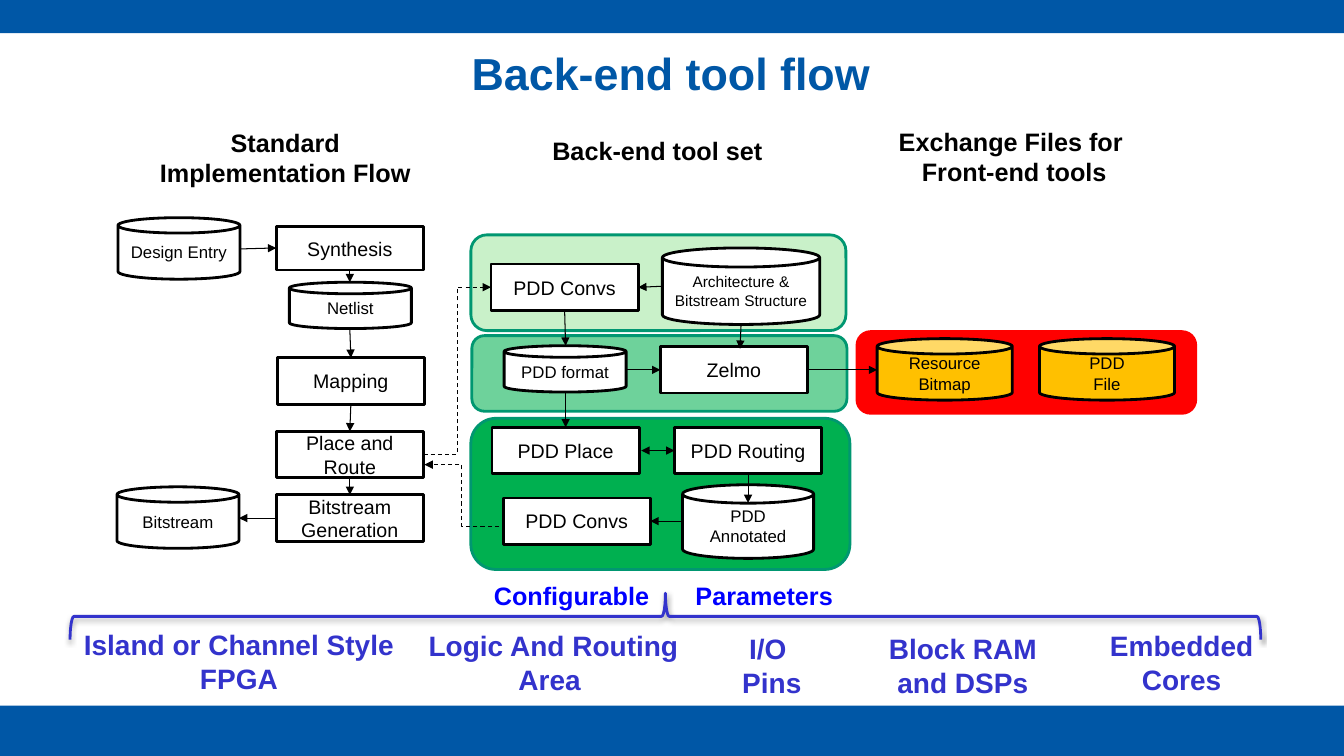
"""Build the back-end tool flow slide."""
import pptx
import pptx.dml.color
import pptx.enum.dml
import pptx.enum.shapes
import pptx.enum.text
import pptx.oxml.ns
import pptx.util
from lxml import etree

Inches = pptx.util.Inches
Pt = pptx.util.Pt
SHAPE = pptx.enum.shapes.MSO_SHAPE
CONNECTOR = pptx.enum.shapes.MSO_CONNECTOR
ALIGN = pptx.enum.text.PP_ALIGN
ANCHOR = pptx.enum.text.MSO_ANCHOR
qn = pptx.oxml.ns.qn

COLORS = {
    "blue": "0057A6", "white": "FFFFFF", "black": "000000", "red": "FF0000",
    "green": "00B050", "light green": "00C102", "teal": "009771",
    "gold": "FFC000", "indigo": "3333CC", "bright blue": "0000FF",
}
BOX_SIZE = (1.46, 0.46)

PANELS = [
    ((8.5, 3.29, 3.36, 0.81), "red", "red", None),
    ((4.67, 4.15, 3.76, 1.5), "green", "teal", None),
    ((4.68, 3.33, 3.72, 0.75), "green", "teal", 57),
    ((4.67, 2.33, 3.72, 0.95), "light green", "teal", 21),
]
PROCESSES = [
    ("Mapping", 2.75, 3.55), ("Place and Route", 2.74, 4.28),
    ("Bitstream Generation", 2.74, 4.91), ("PDD Convs", 4.87, 2.62),
    ("Zelmo", 6.55, 3.44), ("PDD Place", 4.88, 4.24),
    ("PDD Routing", 6.69, 4.24), ("PDD Convs", 4.99, 4.94),
]
STORES = [
    ("Design Entry", (1.17, 2.16, 1.21, 0.61), "white", 12),
    ("Bitstream", (1.16, 4.83, 1.21, 0.61), "white", 12),
    ("Netlist", (2.87, 2.8, 1.21, 0.46), "white", 12),
    ("Architecture & Bitstream Structure", (6.57, 2.46, 1.56, 0.76), "white", 11),
    ("PDD format", (5, 3.43, 1.21, 0.46), "white", 12),
    ("PDD Annotated", (6.77, 4.81, 1.3, 0.73), "white", 12),
    ("Resource Bitmap", (8.7, 3.36, 1.34, 0.61), "gold", 12),
    ("PDD\nFile", (10.31, 3.36, 1.34, 0.61), "gold", 12),
]
ARROWS = [
    (2.38, 2.47, 2.74, 2.46), (3.47, 2.68, 3.47, 2.8), (3.47, 3.27, 3.48, 3.55),
    (3.48, 4.01, 3.47, 4.28), (3.47, 4.74, 3.47, 4.91), (2.74, 5.14, 2.37, 5.14),
    (6.57, 2.84, 6.33, 2.85), (5.6, 3.08, 5.61, 3.43), (7.35, 3.22, 7.34, 3.46),
    (6.21, 3.67, 6.55, 3.67), (8.01, 3.67, 8.7, 3.67), (5.61, 3.9, 5.61, 4.24),
    (7.42, 4.69, 7.42, 4.99), (6.77, 5.17, 6.45, 5.17),
]
FEEDBACK_ARROWS = [(4.2, 4.51, 4.87, 2.85), (4.95, 5.22, 4.21, 4.61)]
HEADINGS = [
    ("Standard\nImplementation Flow", (1.16, 1.21, 3.34, 0.71)),
    ("Back-end tool set", (4.85, 1.29, 3.34, 0.4)),
    ("Exchange Files for \nFront-end tools", (8.39, 1.2, 3.34, 0.71)),
]
PARAMETERS = [
    ("Island or Channel Style \nFPGA", (0.7, 6.18, 3.34, 0.77)),
    ("Logic And Routing\nArea ", (3.82, 6.19, 3.34, 0.77)),
    ("I/O \nPins", (6.45, 6.22, 2.41, 0.77)),
    ("Block RAM and DSPs", (8.5, 6.22, 2.1, 0.77)),
    ("Embedded Cores", (10.67, 6.19, 2.1, 0.77)),
]


def rgb(name):
    """Return the named colour."""
    return pptx.dml.color.RGBColor.from_string(COLORS[name])


def write_text(frame, text, size=14, color="black", bold=False,
               align=ALIGN.CENTER, anchor=ANCHOR.MIDDLE):
    """Write one paragraph per line of text in a single format."""
    frame.word_wrap = True
    frame.vertical_anchor = anchor
    for index, line in enumerate(text.split("\n")):
        paragraph = frame.add_paragraph() if index else frame.paragraphs[0]
        paragraph.alignment = align
        run = paragraph.add_run()
        run.text = line
        run.font.name = "Arial"
        run.font.size = Pt(size)
        run.font.bold = bold
        run.font.color.rgb = rgb(color)


def add_shape(slide, kind, bounds, fill=None, line=None, alpha=None):
    """Add a preset shape, with an optional opacity in percent."""
    shape = slide.shapes.add_shape(kind, *map(Inches, bounds))
    shape.shadow.inherit = False
    if fill:
        shape.fill.solid()
        shape.fill.fore_color.rgb = rgb(fill)
    else:
        shape.fill.background()
    if line:
        shape.line.color.rgb = rgb(line)
        shape.line.width = Pt(2)
    else:
        shape.line.fill.background()
    if alpha:
        color = shape.fill._xPr.find(".//" + qn("a:srgbClr"))
        etree.SubElement(color, qn("a:alpha"), val=str(alpha * 1000))
    return shape


def add_node(slide, kind, text, bounds, fill="white", size=14):
    """Add an outlined flow node with centred text."""
    shape = add_shape(slide, kind, bounds, fill, "black")
    write_text(shape.text_frame, text, size=size)


def add_label(slide, text, bounds, **text_format):
    """Add a bold text box."""
    box = slide.shapes.add_textbox(*map(Inches, bounds))
    write_text(box.text_frame, text, bold=True, anchor=ANCHOR.TOP, **text_format)
    return box


def add_arrow(slide, ends, kind=CONNECTOR.STRAIGHT, dashed=False, double=False):
    """Add a thin black arrow."""
    connector = slide.shapes.add_connector(kind, *map(Inches, ends))
    connector.line.color.rgb = rgb("black")
    connector.line.width = Pt(0.75)
    if dashed:
        connector.line.dash_style = pptx.enum.dml.MSO_LINE.DASH
    line = connector.line._get_or_add_ln()
    for tag in ("a:headEnd", "a:tailEnd") if double else ("a:tailEnd",):
        etree.SubElement(line, qn(tag), type="triangle")
    etree.SubElement(connector._element.spPr, qn("a:effectLst"))


def add_brace(slide):
    """Add the wide brace with a soft shadow above the parameters."""
    brace = add_shape(slide, SHAPE.RIGHT_BRACE, (6.37, 0.21, 0.46, 11.81), line="indigo")
    brace.rotation = 270
    effects = brace._element.spPr.find(qn("a:effectLst"))
    shadow = etree.SubElement(effects, qn("a:outerShdw"), blurRad=str(Pt(3.1)),
                              dist=str(Pt(1.6)), dir="5400000", rotWithShape="0")
    color = etree.SubElement(shadow, qn("a:srgbClr"), val=COLORS["black"])
    etree.SubElement(color, qn("a:alpha"), val="38000")


def add_brace_caption(slide):
    """Add the caption whose two words stand on either side of the brace tip."""
    box = add_label(slide, "Configurable\tParameters", (4.45, 5.71, 4.14, 0.4),
                    size=18, color="bright blue", align=ALIGN.LEFT)
    properties = box.text_frame.paragraphs[0]._p.get_or_add_pPr()
    properties.set("marL", str(Inches(0.35)))
    properties.set("indent", "0")
    tabs = etree.SubElement(properties, qn("a:tabLst"))
    etree.SubElement(tabs, qn("a:tab"), pos=str(Inches(2.11)), algn="l")


def add_title(slide, text):
    """Place and format the title."""
    title = slide.shapes.title
    title.left, title.top, title.width, title.height = map(
        Inches, (0.54, 0.13, 12.23, 1.19))
    write_text(title.text_frame, text, size=32, color="blue", bold=True)


def main():
    """Build and save the slide."""
    presentation = pptx.Presentation()
    presentation.slide_width = Inches(13.33)
    presentation.slide_height = Inches(7.5)
    slide = presentation.slides.add_slide(presentation.slide_layouts[5])
    for top, height in ((0, 0.33), (7, 0.5)):
        add_shape(slide, SHAPE.RECTANGLE, (0, top, 13.33, height), "blue")
    add_title(slide, "Back-end tool flow")
    for bounds, fill, line, alpha in PANELS:
        add_shape(slide, SHAPE.ROUNDED_RECTANGLE, bounds, fill, line, alpha)
    add_node(slide, SHAPE.RECTANGLE, "Synthesis", (2.74, 2.25, 1.46, 0.43))
    for text, left, top in PROCESSES:
        add_node(slide, SHAPE.RECTANGLE, text, (left, top, *BOX_SIZE))
    for text, bounds, fill, size in STORES:
        add_node(slide, SHAPE.CAN, text, bounds, fill, size)
    for ends in ARROWS:
        add_arrow(slide, ends)
    add_arrow(slide, (6.36, 4.47, 6.69, 4.47), double=True)
    for ends in FEEDBACK_ARROWS:
        add_arrow(slide, ends, kind=CONNECTOR.ELBOW, dashed=True)
    for text, bounds in HEADINGS:
        add_label(slide, text, bounds, size=18)
    for text, bounds in PARAMETERS:
        add_label(slide, text, bounds, size=20, color="indigo")
    add_brace(slide)
    add_brace_caption(slide)
    presentation.save("out.pptx")


if __name__ == "__main__":
    main()
